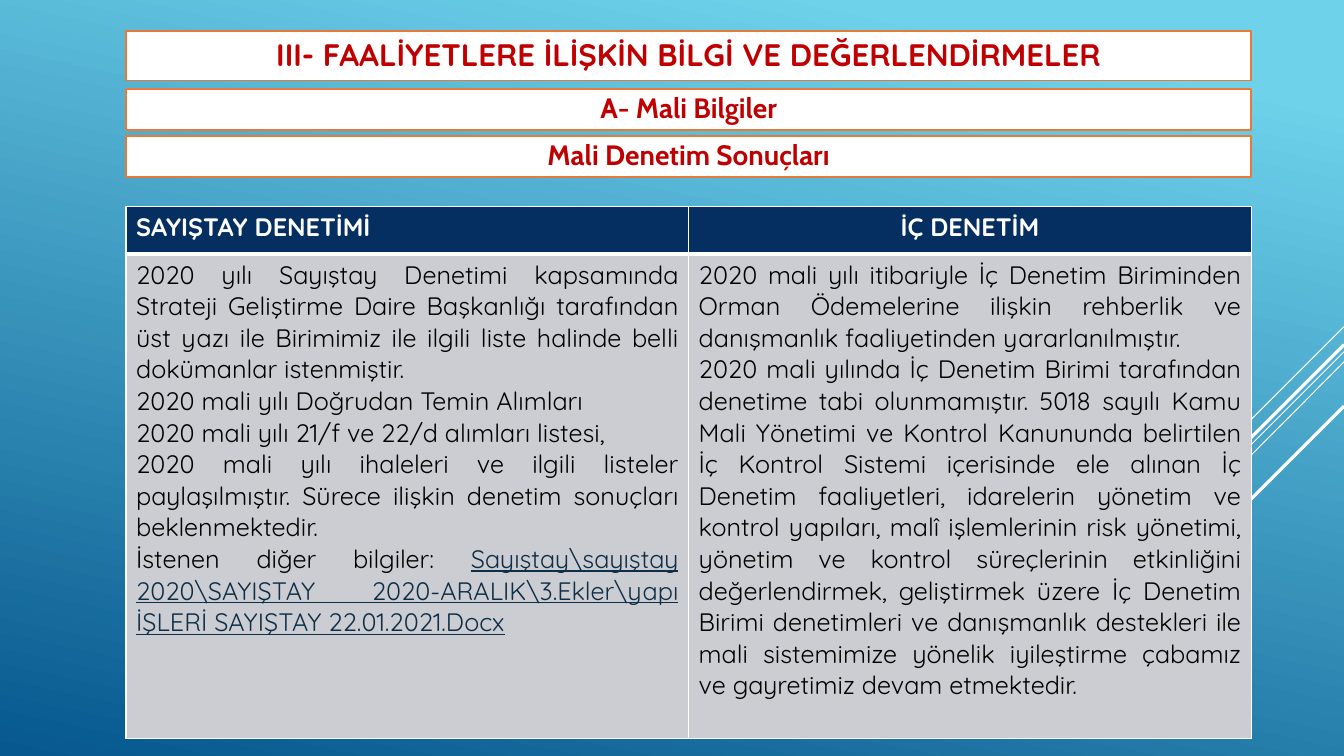
from lxml import etree
from pptx import Presentation
from pptx.dml.color import RGBColor
from pptx.enum.shapes import MSO_CONNECTOR, MSO_SHAPE
from pptx.enum.text import MSO_ANCHOR, PP_ALIGN
from pptx.oxml.ns import qn
from pptx.util import Pt

PX = 9144  # 100 px to the inch
STRAIGHT = MSO_CONNECTOR.STRAIGHT
RECTANGLE = MSO_SHAPE.RECTANGLE
MIDDLE = MSO_ANCHOR.MIDDLE
CENTER, JUSTIFY = PP_ALIGN.CENTER, PP_ALIGN.JUSTIFY

WHITE = RGBColor(0xFF, 0xFF, 0xFF)
BLACK = RGBColor(0x00, 0x00, 0x00)
RED = RGBColor(0xC0, 0x00, 0x00)
ORANGE = RGBColor(0xE8, 0x79, 0x37)
NAVY = RGBColor(0x05, 0x2F, 0x61)
GREY = RGBColor(0xCC, 0xCD, 0xD2)
LINK_BLUE = RGBColor(0x0D, 0x2E, 0x46)
SKY = RGBColor(0x6E, 0xD2, 0xEB)
DEEP_BLUE = RGBColor(0x06, 0x58, 0x8E)

HEADING = {"name": "Quicksand", "size": Pt(22.2), "bold": True}
SUBHEADING = {"name": "Cabin", "size": Pt(20), "bold": True}
TABLE_HEAD = {"name": "Quicksand", "size": Pt(18), "bold": True}
TABLE_BODY = {"name": "Quicksand", "size": Pt(18), "bold": False}
TABLE_LINK = {**TABLE_BODY, "underline": True}

# Right end x, y, left end x, y, width in points
RAYS = [
    (1333, 324, 1233, 424, 0.75),
    (1333, 349, 1007, 675, 0.75),
    (1333, 359, 1126, 567, 0.75),
    (1333, 342, 1142, 533, 2.25),
    (1333, 403, 1194, 542, 2.25),
]

# Top, height, text, format
BANNERS = [
    (31, 49, "III- FAALİYETLERE İLİŞKİN BİLGİ VE DEĞERLENDİRMELER", HEADING),
    (88, 41, "A- Mali Bilgiler", SUBHEADING),
    (135, 41, "Mali Denetim Sonuçları", SUBHEADING),
]
LEFT, WIDTH = 125, 1116

TABLE_TOP = 205
ROW_HEIGHTS = (47, 481)
HEADERS = [("SAYIŞTAY DENETİMİ", JUSTIFY), ("İÇ DENETİM", CENTER)]
COURT_AUDIT = [
    "2020 yılı Sayıştay Denetimi kapsamında Strateji Geliştirme Daire Başkanlığı "
    "tarafından üst yazı ile Birimimiz ile ilgili liste halinde belli dokümanlar "
    "istenmiştir.",
    "2020 mali yılı Doğrudan Temin Alımları",
    "2020 mali yılı 21/f ve 22/d alımları listesi,",
    "2020 mali yılı ihaleleri ve ilgili listeler paylaşılmıştır. Sürece ilişkin "
    "denetim sonuçları beklenmektedir.",
    "İstenen diğer bilgiler: ",
]
DOCUMENT_LINK = ("Sayıştay\\sayıştay 2020\\SAYIŞTAY 2020-ARALIK\\3.Ekler\\yapı "
                 "İŞLERİ SAYIŞTAY 22.01.2021.Docx")
INTERNAL_AUDIT = [
    "2020 mali yılı itibariyle İç Denetim Biriminden Orman Ödemelerine ilişkin "
    "rehberlik ve danışmanlık faaliyetinden yararlanılmıştır.",
    "2020 mali yılında İç Denetim Birimi tarafından denetime tabi olunmamıştır. "
    "5018 sayılı Kamu Mali Yönetimi ve Kontrol Kanununda belirtilen İç Kontrol "
    "Sistemi içerisinde ele alınan İç Denetim faaliyetleri, idarelerin yönetim ve "
    "kontrol yapıları, malî işlemlerinin risk yönetimi, yönetim ve kontrol "
    "süreçlerinin etkinliğini değerlendirmek, geliştirmek üzere İç Denetim Birimi "
    "denetimleri ve danışmanlık destekleri ile mali sistemimize yönelik iyileştirme "
    "çabamız ve gayretimiz devam etmektedir.",
]


def px(*lengths):
    return [length * PX for length in lengths]


def add_span(para, text, style, color):
    span = para.add_run()
    span.text = text
    for key, value in style.items():
        setattr(span.font, key, value)
    span.font.color.rgb = color


def write_paragraphs(frame, texts, style, color, align):
    for index, text in enumerate(texts):
        para = frame.add_paragraph() if index else frame.paragraphs[0]
        para.alignment = align
        add_span(para, text, style, color)


def paint_background(page):
    fill = page.background.fill
    fill.gradient()
    fill.gradient_angle = 258
    for stop, position, color in zip(fill.gradient_stops, (0.1, 1), (SKY, DEEP_BLUE)):
        stop.position = position
        stop.color.rgb = color


def add_ray(page, x1, y1, x2, y2, weight):
    ray = page.shapes.add_connector(STRAIGHT, *px(x1, y1, x2, y2))
    ray.line.color.rgb = WHITE
    ray.line.width = Pt(weight)
    etree.SubElement(ray._element.spPr, qn("a:effectLst"))


def add_banner(page, top, height, text, style):
    box = page.shapes.add_shape(RECTANGLE, *px(LEFT, top, WIDTH, height))
    box.shadow.inherit = False
    box.fill.solid()
    box.fill.fore_color.rgb = WHITE
    box.line.color.rgb = ORANGE
    box.line.width = Pt(1.25)
    frame = box.text_frame
    frame.word_wrap = True
    frame.vertical_anchor = MIDDLE
    write_paragraphs(frame, [text], style, RED, CENTER)
    frame.paragraphs[0].line_spacing = 0.9


def format_cell(cell, color, top, bottom):
    properties = cell._tc.get_or_add_tcPr()
    for side, weight in {"L": 1, "R": 1, "T": top, "B": bottom}.items():
        border = etree.SubElement(properties, qn(f"a:ln{side}"), w=str(Pt(weight)))
        fill = etree.SubElement(border, qn("a:solidFill"))
        etree.SubElement(fill, qn("a:srgbClr"), val=str(WHITE))
    cell.fill.solid()
    cell.fill.fore_color.rgb = color


def add_audit_table(page):
    area = px(LEFT, TABLE_TOP, WIDTH, sum(ROW_HEIGHTS))
    table = page.shapes.add_table(2, 2, *area).table
    for row, height in zip(table.rows, ROW_HEIGHTS):
        row.height = height * PX
    bodies = (COURT_AUDIT, INTERNAL_AUDIT)
    for column, ((header, align), body) in enumerate(zip(HEADERS, bodies)):
        head_cell, body_cell = table.cell(0, column), table.cell(1, column)
        format_cell(head_cell, NAVY, top=1, bottom=3)
        format_cell(body_cell, GREY, top=3, bottom=1)
        write_paragraphs(head_cell.text_frame, [header], TABLE_HEAD, WHITE, align)
        write_paragraphs(body_cell.text_frame, body, TABLE_BODY, BLACK, JUSTIFY)
    last_para = table.cell(1, 0).text_frame.paragraphs[-1]
    add_span(last_para, DOCUMENT_LINK, TABLE_LINK, LINK_BLUE)


def main():
    deck = Presentation()
    deck.slide_width, deck.slide_height = px(1333, 750)
    page = deck.slides.add_slide(deck.slide_layouts[6])

    # Background and decorative rays
    paint_background(page)
    for ray in RAYS:
        add_ray(page, *ray)

    # Headings
    for banner in BANNERS:
        add_banner(page, *banner)

    # Audit results
    add_audit_table(page)
    deck.save("out.pptx")


if __name__ == "__main__":
    main()
